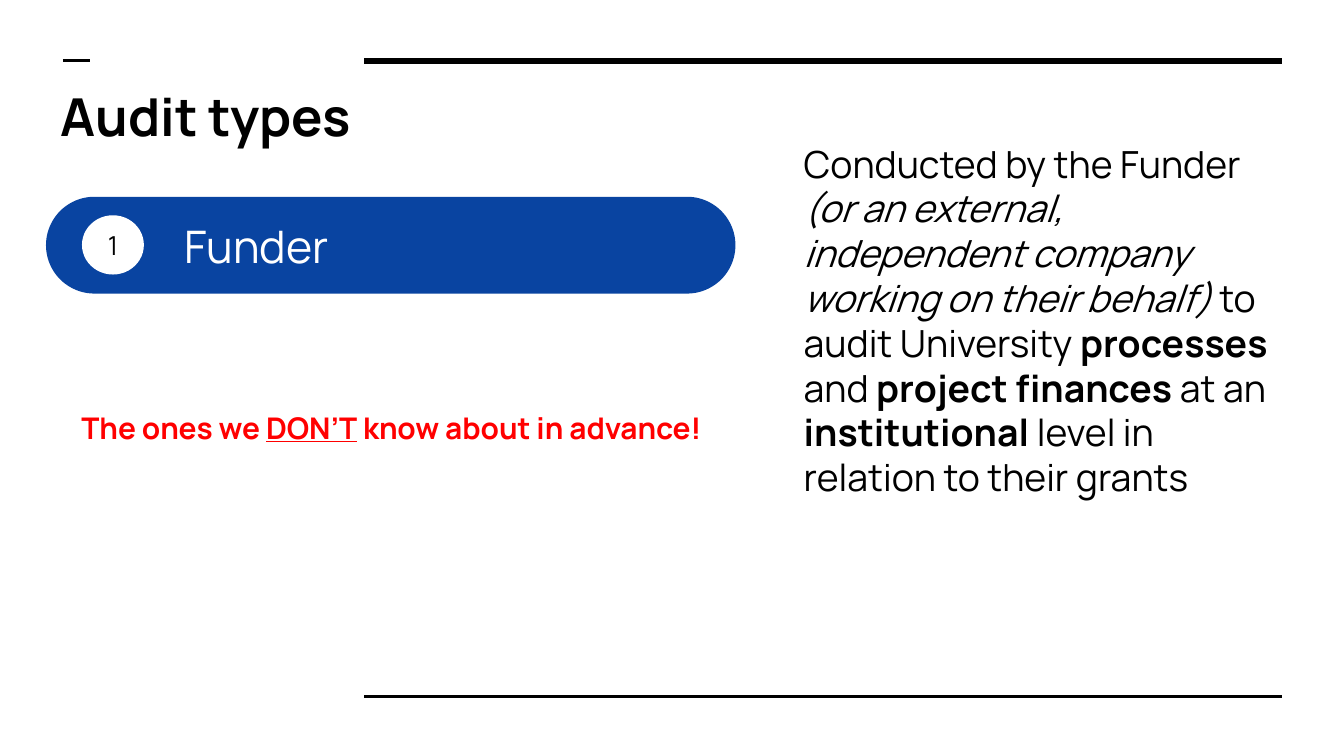
from lxml import etree
from pptx import Presentation
from pptx import util as u
from pptx.dml.color import RGBColor
from pptx.enum import shapes, text
from pptx.oxml.ns import qn

COLOURS = {"black": "000000", "white": "FFFFFF", "blue": "0944A1", "red": "FF0000"}
FONT = "Manrope"
INSET = u.Cm(0.25)


def colour(name):
    return RGBColor.from_string(COLOURS[name])


def add_rule(slide, left, right, y, weight):
    rule = slide.shapes.add_connector(
        shapes.MSO_CONNECTOR.STRAIGHT, u.Cm(left), u.Cm(y), u.Cm(right), u.Cm(y))
    rule.line.color.rgb = colour("black")
    rule.line.width = u.Pt(weight)
    etree.SubElement(rule._element.spPr, qn("a:effectLst"))


def add_filled(slide, kind, box, fill):
    filled = slide.shapes.add_shape(kind, *map(u.Cm, box))
    filled.shadow.inherit = False
    filled.fill.solid()
    filled.fill.fore_color.rgb = colour(fill)
    filled.line.fill.background()
    return filled


def write(holder, pieces, size, tint, align="LEFT", anchor="TOP"):
    frame = holder.text_frame
    frame.word_wrap = True
    frame.vertical_anchor = getattr(text.MSO_ANCHOR, anchor)
    frame.margin_left = frame.margin_right = INSET
    frame.margin_top = frame.margin_bottom = INSET
    paragraph = frame.paragraphs[0]
    paragraph.alignment = getattr(text.PP_ALIGN, align)
    for words, style in pieces:
        run = paragraph.add_run()
        run.text = words
        run.font.name = FONT
        run.font.size = u.Pt(size)
        run.font.color.rgb = colour(tint)
        run.font.bold = "b" in style
        run.font.italic = "i" in style
        run.font.underline = "u" in style


def add_words(slide, box, pieces, size, tint, align="LEFT", anchor="TOP"):
    words = slide.shapes.add_textbox(*map(u.Cm, box))
    write(words, pieces, size, tint, align, anchor)


def main():
    deck = Presentation()
    deck.slide_width, deck.slide_height = u.Cm(25.4), u.Cm(14.29)
    slide = deck.slides.add_slide(deck.slide_layouts[6])

    add_rule(slide, 6.88, 24.23, 1.15, 3)
    add_rule(slide, 6.88, 24.23, 13.16, 1.5)
    add_rule(slide, 1.19, 1.7, 1.15, 1.5)

    add_words(slide, (0.9, 1.35, 23, 2.1), [("Audit types", "b")], 28, "black")

    banner = add_filled(slide, shapes.MSO_SHAPE.ROUNDED_RECTANGLE,
                        (0.87, 3.72, 13.03, 1.83), "blue")
    banner.adjustments[0] = 0.5
    badge = add_filled(slide, shapes.MSO_SHAPE.OVAL, (1.55, 4.07, 1.17, 1.12), "white")
    write(badge, [("1", "")], 14, "black", "CENTER", "MIDDLE")
    add_words(slide, (3.23, 3.72, 9.98, 1.83), [("Funder", "")], 24, "white",
              anchor="MIDDLE")

    description = [
        ("Conducted by the Funder", ""),
        (" (or an external, independent company working on their behalf) ", "i"),
        ("to audit University ", ""),
        ("processes", "b"),
        (" and ", ""),
        ("project finances", "b"),
        (" at an ", ""),
        ("institutional", "b"),
        (" level in relation to their grants", ""),
    ]
    add_words(slide, (14.94, 2.41, 9.6, 10.26), description, 20, "black")

    warning = [("The ones we ", "b"), ("DON’T", "bu"), (" know about in advance!", "b")]
    add_words(slide, (0.9, 7.49, 13, 1.12), warning, 16, "red", "CENTER")

    deck.save("out.pptx")


if __name__ == "__main__":
    main()
